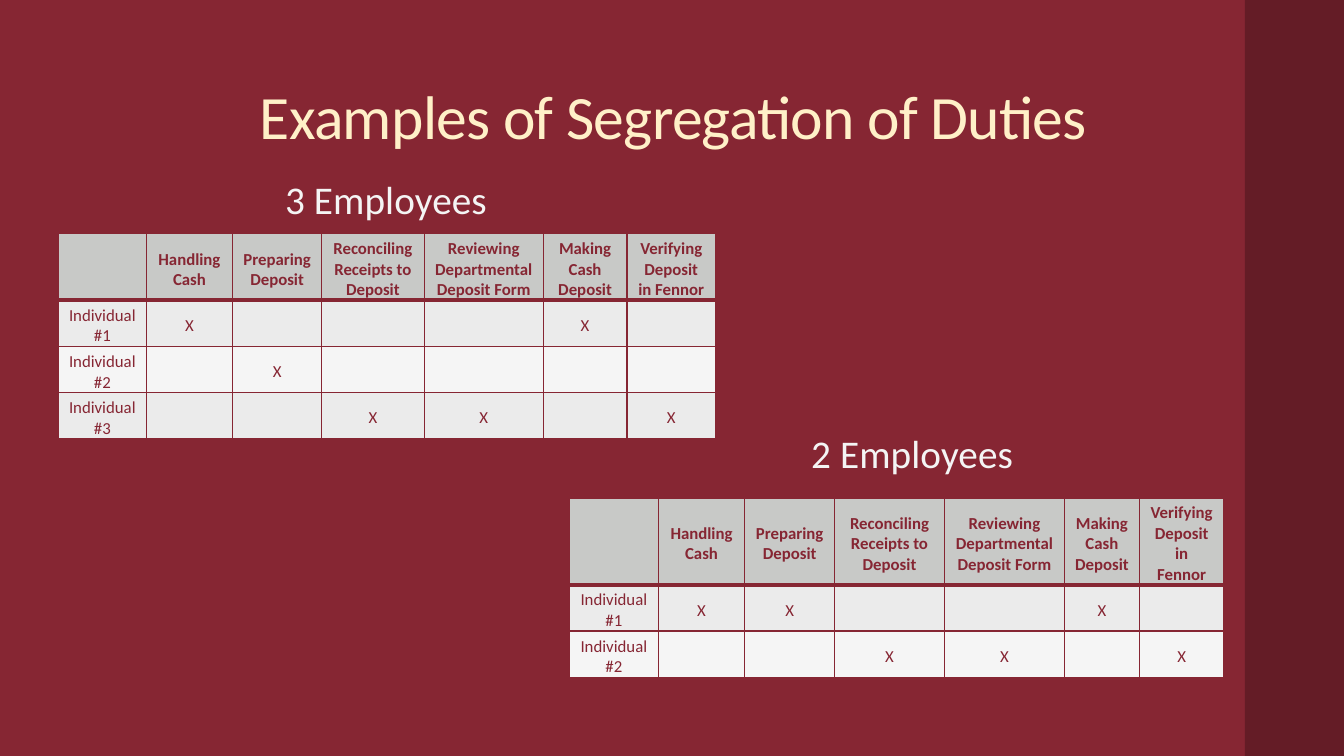
from lxml.etree import SubElement
from pptx import Presentation
from pptx.dml.color import RGBColor
from pptx.enum.shapes import MSO_SHAPE as Shape
from pptx.enum.text import MSO_ANCHOR as Anchor, PP_ALIGN as Align
from pptx.oxml import parse_xml
from pptx.oxml.ns import nsdecls, qn
from pptx.util import Pt

COLORS = {
    "maroon": "862633",
    "side band": "641C26",
    "cream": "FFF0C8",
    "white": "F4F4F4",
    "header": "C8C9C7",
    "odd row": "EBEBEB",
    "even row": "F5F5F5",
}
FONT = "Calibri"
DUTIES = [
    "Handling Cash",
    "Preparing Deposit",
    "Reconciling Receipts to Deposit",
    "Reviewing Departmental Deposit Form",
    "Making Cash Deposit",
    "Verifying Deposit in Fennor",
]


def color(name):
    return RGBColor.from_string(COLORS[name])


def paint(fill, name):
    fill.solid()
    fill.fore_color.rgb = color(name)


def style(paragraph, size, color_name, bold=False):
    paragraph.alignment = Align.CENTER
    paragraph.font.name = FONT
    paragraph.font.size = Pt(size)
    paragraph.font.bold = bold
    paragraph.font.color.rgb = color(color_name)


def add_side_band(slide):
    band = slide.shapes.add_shape(Shape.RECTANGLE, Pt(889.2), 0, Pt(72), Pt(540))
    band.shadow.inherit = False
    paint(band.fill, "side band")
    band.line.fill.background()


def add_heading(slide, text, box, size, color_name, line_spacing, tracking):
    """Bottom-anchored, centred text; tracking is in hundredths of a point."""
    frame = slide.shapes.add_textbox(*map(Pt, box)).text_frame
    frame.word_wrap = True
    frame.vertical_anchor = Anchor.BOTTOM
    heading = frame.paragraphs[0]
    style(heading, size, color_name)
    heading.line_spacing = line_spacing
    run = heading.add_run()
    run.text = text
    run.font._element.set("spc", str(tracking))


def set_borders(cell, top, bottom):
    """Draw all four sides, the vertical ones 1 point wide."""
    properties = cell._tc.get_or_add_tcPr()
    sides = [("lnL", 1), ("lnR", 1), ("lnT", top), ("lnB", bottom)]
    for position, (side, width) in enumerate(sides):
        border = parse_xml(f'<a:{side} {nsdecls("a")} w="{Pt(width)}"/>')
        fill = SubElement(border, qn("a:solidFill"))
        SubElement(fill, qn("a:srgbClr"), val=COLORS["maroon"])
        properties.insert(position, border)


def fill_cell(cell, text, row):
    cell.text = text
    cell.vertical_anchor = Anchor.MIDDLE
    cell.margin_left = cell.margin_right = Pt(7.2)
    cell.margin_top, cell.margin_bottom = Pt(3.6), 0
    style(cell.text_frame.paragraphs[0], 12, "maroon", bold=row == 0)
    paint(cell.fill, "header" if row == 0 else "odd row" if row % 2 else "even row")
    set_borders(cell, top=3 if row == 1 else 1, bottom=3 if row == 0 else 1)


def add_duty_table(slide, left, top, widths, heights, assignments):
    """assignments holds, for each individual, the numbers of the duties held."""
    rows = [["", *DUTIES]]
    for number, held in enumerate(assignments, 1):
        marks = ["X" if duty in held else "" for duty in range(1, len(DUTIES) + 1)]
        rows.append([f"Individual #{number}", *marks])

    table = slide.shapes.add_table(
        len(rows), len(widths), Pt(left), Pt(top), Pt(sum(widths)), Pt(sum(heights))
    ).table
    for column, width in zip(table.columns, widths):
        column.width = Pt(width)
    for row, (texts, height) in enumerate(zip(rows, heights)):
        table.rows[row].height = Pt(height)
        for column, text in enumerate(texts):
            fill_cell(table.cell(row, column), text, row)


def main():
    deck = Presentation()
    deck.slide_width, deck.slide_height = Pt(960), Pt(540)
    slide = deck.slides.add_slide(deck.slide_layouts[6])
    paint(slide.background.fill, "maroon")
    add_side_band(slide)

    add_heading(slide, "Examples of Segregation of Duties",
                (99.4, 8.6, 763.2, 104.4), 44, "cream", 0.9, -50)

    add_heading(slide, "3 Employees", (99.4, 105.8, 352.8, 57.6), 28, "white", 0.95, 10)
    add_duty_table(slide, 41.8, 167, [62.6, 61.9, 63.4, 73.4, 85, 59.8, 63.4],
                   [47.5, 33, 33, 33], [{1, 5}, {2}, {3, 4, 6}])

    add_heading(slide, "2 Employees", (475.2, 287.3, 352.8, 57.6), 28, "white", 0.95, 10)
    add_duty_table(slide, 406.8, 355.7, [63.4, 61.9, 64.1, 78.5, 85.7, 53.5, 60.5],
                   [62, 33, 33], [{1, 2, 5}, {3, 4, 6}])

    deck.save("out.pptx")


if __name__ == "__main__":
    main()
